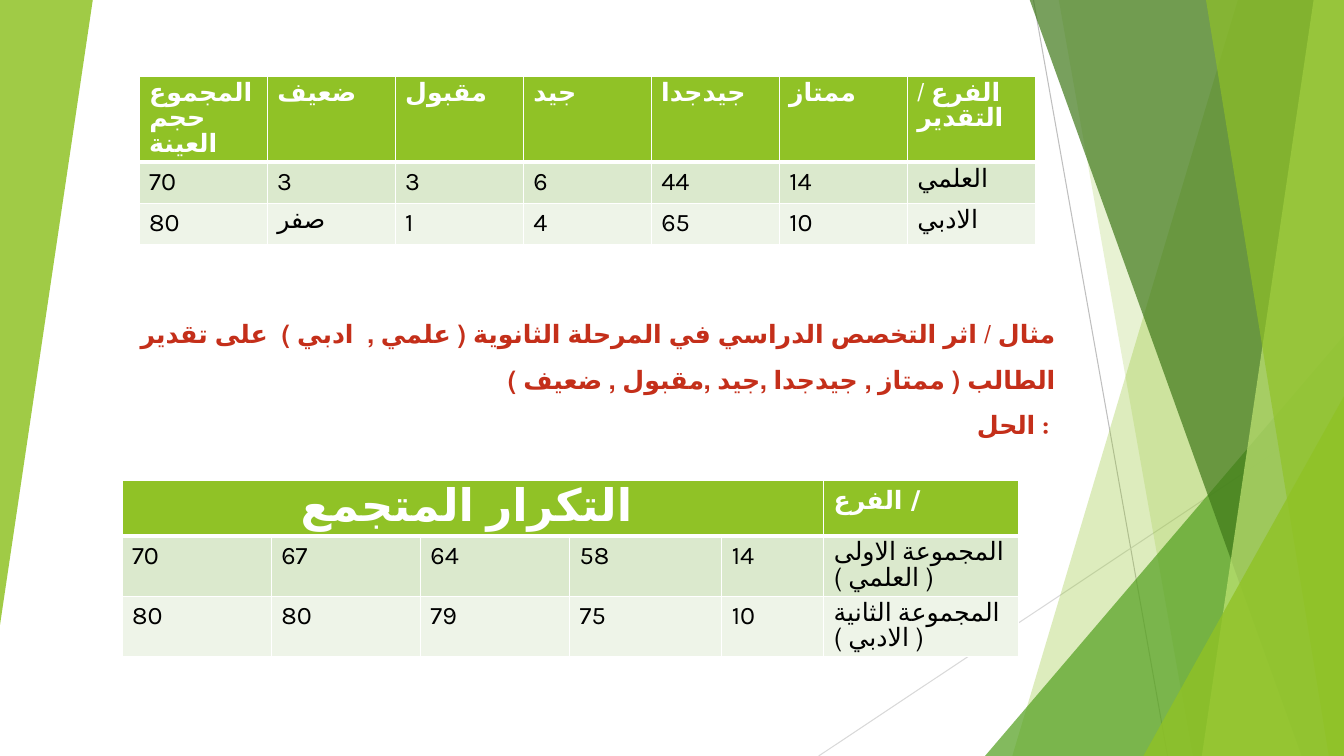
from lxml import etree
from pptx import Presentation
from pptx import util as u
from pptx.dml.color import RGBColor
from pptx.enum import lang, shapes, text
from pptx.oxml import ns

WHITE = RGBColor(0xFF, 0xFF, 0xFF)
BLACK = RGBColor(0x00, 0x00, 0x00)
RED = RGBColor(0xC4, 0x2F, 0x1A)
LIME = RGBColor(0x90, 0xC2, 0x26)
GREEN = RGBColor(0x54, 0xA0, 0x21)
DARK = RGBColor(0x3F, 0x78, 0x19)
PALE = RGBColor(0xC0, 0xE4, 0x74)
BANDS = [LIME, RGBColor(0xDB, 0xE9, 0xCD), RGBColor(0xEE, 0xF4, 0xE8)]
GRAY = RGBColor(0xBF, 0xBF, 0xBF)
SILVER = RGBColor(0xD9, 0xD9, 0xD9)

BODY = {"name": "Karla", "size": u.Pt(18), "bold": False,
        "language_id": lang.MSO_LANGUAGE_ID.ARABIC}
BOLD = {**BODY, "bold": True}
LARGE = {**BOLD, "size": u.Pt(32)}

FACETS = [
    ("wedge", 1.05, 3.29, LIME, 30),
    ("wedge", 2.83, 1.5, LIME, 20),
    ("peak", 3.56, 4.17, GREEN, 72),
    ("wedge", 3.12, 0.42, DARK, 70),
    ("wedge", 0.3, 1.41, PALE, 70),
    ("wedge", 1.37, 0.15, LIME, 65),
    ("peak", 1.99, 3.57, LIME, 80),
]

GRADES = [
    ["المجموع حجم العينة", "ضعيف", "مقبول", "جيد", "جيدجدا", "ممتاز", "الفرع / التقدير"],
    ["70", "3", "3", "6", "44", "14", "العلمي"],
    ["80", "صفر", "1", "4", "65", "10", "الادبي"],
]
TOTALS = [
    ["التكرار المتجمع ", "", "", "", "", "الفرع /"],
    ["70", "67", "64", "58", "14", "المجموعة الاولى ( العلمي )"],
    ["80", "80", "79", "75", "10", "المجموعة الثانية ( الادبي )"],
]
PROMPT = (
    "مثال / اثر التخصص الدراسي في المرحلة الثانوية ( علمي ,  ادبي )  على تقدير "
    "الطالب ( ممتاز , جيدجدا ,جيد ,مقبول , ضعيف ) \vالحل : "
)


def assign(item, values):
    """Set each named attribute on the item."""
    for name, value in values.items():
        setattr(item, name, value)


def write(frame, words, fmt, color):
    """Put formatted words in a text frame and return the paragraph."""
    frame.text = words
    para = frame.paragraphs[0]
    for run in para.runs:
        assign(run.font, fmt)
        run.font.color.rgb = color
    return para


def paint(shape, color, alpha):
    """Give a shape a clear fill without line or shadow."""
    shape.shadow.inherit = False
    shape.line.fill.background()
    shape.fill.solid()
    shape.fill.fore_color.rgb = color
    tint = shape.fill._xPr.find(".//" + ns.qn("a:srgbClr"))
    etree.SubElement(tint, ns.qn("a:alpha"), val=str(alpha * 1000))


def draw_line(slide, start, end, color):
    """Draw a thin line between two points in inches."""
    ends = [u.Inches(n) for n in (*start, *end)]
    line = slide.shapes.add_connector(shapes.MSO_CONNECTOR.STRAIGHT, *ends)
    line.line.color.rgb = color
    line.line.width = u.Pt(0.75)
    etree.SubElement(line._element.spPr, ns.qn("a:effectLst"))


def draw_wedge(slide, box, upper, lower):
    """Draw a right-edge wedge with the given top and bottom widths."""
    left, top, width, height = box
    right, base = left + width, top + height
    first, *rest = [
        (u.Inches(x), u.Inches(y))
        for x, y in [(right - upper, top - 0.01), (right, top - 0.01),
                     (right, base), (right - lower, base)]
    ]
    path = slide.shapes.build_freeform(*first)
    path.add_line_segments(rest, close=True)
    return path.convert_to_shape()


def draw_peak(slide, *box):
    """Draw a right triangle leaning on the right side of its box."""
    size = [u.Inches(n) for n in box]
    peak = slide.shapes.add_shape(shapes.MSO_SHAPE.ISOSCELES_TRIANGLE, *size)
    peak.adjustments[0] = 1
    return peak


def draw_facets(slide, box):
    """Draw the facets and lines along both sides of the box."""
    left, top, width, height = box
    right, base = left + width, top + height
    draw_line(slide, (right - 3.08, top), (right - 1.75, base), GRAY)
    draw_line(slide, (right, top + 4.03), (right - 5.21, base), SILVER)
    for kind, one, two, color, alpha in FACETS:
        if kind == "wedge":
            facet = draw_wedge(slide, box, one, two)
        else:
            facet = draw_peak(slide, right - one, base - two, one, two)
        paint(facet, color, alpha)
    side = draw_peak(slide, left, top, 0.92, 6.2)
    side.rotation = 180
    paint(side, LIME, 85)


def place_title(slide, box):
    """Place the example text in the title above the facets."""
    title = slide.shapes.title
    slide.shapes._spTree.append(title._element)
    assign(title, dict(zip(("left", "top", "width", "height"), map(u.Inches, box))))
    frame = title.text_frame
    assign(frame, {"word_wrap": True, "auto_size": text.MSO_AUTO_SIZE.NONE,
                   "vertical_anchor": text.MSO_ANCHOR.BOTTOM})
    para = write(frame, PROMPT, BOLD, RED)
    assign(para, {"alignment": text.PP_ALIGN.RIGHT, "line_spacing": 1.5})


def underline(cell):
    """Give a heading cell its thick white lower border."""
    edge = etree.Element(ns.qn("a:lnB"), w=str(u.Pt(3)))
    fill = etree.SubElement(edge, ns.qn("a:solidFill"))
    etree.SubElement(fill, ns.qn("a:srgbClr"), val=str(WHITE))
    cell._tc.get_or_add_tcPr().insert(0, edge)


def place_table(slide, box, rows, widths):
    """Fill a banded table in the box and return it."""
    size = [u.Inches(n) for n in box]
    table = slide.shapes.add_table(len(rows), len(widths), *size).table
    for col, width in zip(table.columns, widths):
        col.width = u.Inches(width)
    for i, row in enumerate(rows):
        table.rows[i].height = u.Inches(0.41)
        fmt, color = (BODY, BLACK) if i else (BOLD, WHITE)
        for j, words in enumerate(row):
            cell = table.cell(i, j)
            cell.fill.solid()
            cell.fill.fore_color.rgb = BANDS[i]
            write(cell.text_frame, words, fmt, color)
            if i == 0:
                underline(cell)
    return table


def place_totals(slide, box):
    """Place the running totals under one wide heading."""
    table = place_table(slide, box, TOTALS, [1.48, 1.48, 1.48, 1.51, 1.01, 1.93])
    head = table.cell(0, 0)
    head.merge(table.cell(0, 4))
    para = write(head.text_frame, TOTALS[0][0], LARGE, WHITE)
    para.alignment = text.PP_ALIGN.CENTER


def main():
    """Build and save the slide."""
    deck = Presentation()
    assign(deck, {"slide_width": u.Inches(13.33), "slide_height": u.Inches(7.5)})
    slide = deck.slides.add_slide(deck.slide_layouts[5])
    draw_facets(slide, (0, 0, 13.33, 7.5))
    place_title(slide, (0.79, 2.71, 9.78, 1.7))
    place_table(slide, (1.38, 0.76, 8.89, 1.23), GRADES, [1.27] * 7)
    place_totals(slide, (1.21, 4.77, 8.89, 1.23))
    deck.save("out.pptx")


if __name__ == "__main__":
    main()
